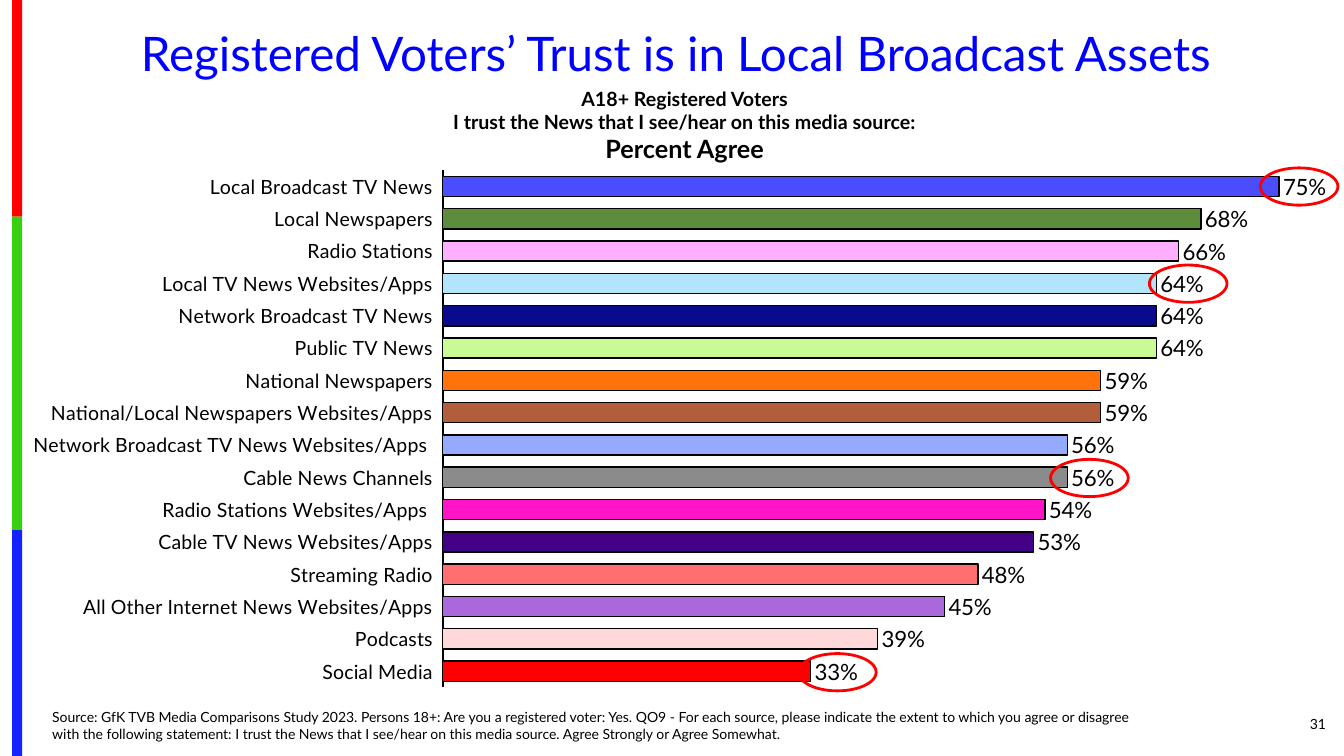
import pptx
import pptx.util
import pptx.oxml
import pptx.chart.data
from pptx.dml.color import RGBColor
from pptx.enum.chart import XL_CHART_TYPE, XL_LABEL_POSITION, XL_TICK_LABEL_POSITION, XL_TICK_MARK
from pptx.enum.shapes import MSO_SHAPE
from pptx.enum.text import MSO_ANCHOR, PP_ALIGN

# Content
TITLE = "Registered Voters’ Trust is in Local Broadcast Assets"
HEADS = [("A18+ Registered Voters", 14),
         ("I trust the News that I see/hear on this media source:", 14),
         ("Percent Agree", 18)]
SOURCE = ("Source: GfK TVB Media Comparisons Study 2023. Persons 18+: Are you a registered voter: Yes. "
          "QO9 - For each source, please indicate the extent to which you agree or disagree "
          "with the following statement: I trust the News that I see/hear on this media source. "
          "Agree Strongly or Agree Somewhat.")
PAGE = "31"
MEDIA = [
    ("Local Broadcast TV News", 0.75, "4C4CFF"),
    ("Local Newspapers", 0.68, "5C8C3C"),
    ("Radio Stations", 0.66, "FFAFFF"),
    ("Local TV News Websites/Apps", 0.64, "B2E5FC"),
    ("Network Broadcast TV News", 0.64, "0A0A8D"),
    ("Public TV News", 0.64, "CAFA96"),
    ("National Newspapers", 0.59, "FF730A"),
    ("National/Local Newspapers Websites/Apps", 0.59, "B25E3C"),
    ("Network Broadcast TV News Websites/Apps ", 0.56, "95A9FD"),
    ("Cable News Channels", 0.56, "8B8B8B"),
    ("Radio Stations Websites/Apps ", 0.54, "FF15C7"),
    ("Cable TV News Websites/Apps", 0.53, "430086"),
    ("Streaming Radio", 0.48, "FF6F6F"),
    ("All Other Internet News Websites/Apps", 0.45, "AA68DC"),
    ("Podcasts", 0.39, "FFD9D9"),
    ("Social Media", 0.33, "FF0000"),
]
RINGS = {0: 12.5, 3: 11.4, 9: 10.42, 15: 7.92}  # chart row: left edge
COLORS = {"black": "000000", "title": "0000FF", "ring": "FF0000"}
STRIPE = [("FE0000", 2.15), ("36CF12", 3.11), ("1322FE", 2.24)]
FONT = "Lato"
WIDE, HIGH = 13.33, 7.5
CHART = (0.33, 1.58, 12.91, 5.25)
PLOT = {"x": 0.311, "y": 0.021, "w": 0.689, "h": 0.979}

inch, pt = pptx.util.Inches, pptx.util.Pt
deck = pptx.Presentation()
deck.slide_width, deck.slide_height = inch(WIDE), inch(HIGH)
slide = deck.slides.add_slide(deck.slide_layouts[6])


def tint(name):
    return RGBColor.from_string(COLORS.get(name, name))


def style(font, size, color="black", bold=False):
    font.name, font.size, font.bold = FONT, pt(size), bold
    font.color.rgb = tint(color)


def text(lines, box, align=PP_ALIGN.LEFT, anchor=MSO_ANCHOR.TOP,
         color="black", bold=False, space=1.0):
    frame = slide.shapes.add_textbox(*map(inch, box)).text_frame
    frame.word_wrap, frame.vertical_anchor = True, anchor
    for i, (line, size) in enumerate(lines):
        para = frame.add_paragraph() if i else frame.paragraphs[0]
        para.alignment, para.line_spacing = align, space
        run = para.add_run()
        run.text = line
        style(run.font, size, color, bold)


def shape(kind, box, fill=None, line=None):
    part = slide.shapes.add_shape(kind, *map(inch, box))
    part.shadow.inherit = False
    if fill:
        part.fill.solid()
        part.fill.fore_color.rgb = tint(fill)
    else:
        part.fill.background()
    if line:
        part.line.color.rgb = tint(line)
        part.line.width = pt(2)
    else:
        part.line.fill.background()


# Side stripe
top = 0
for color, tall in STRIPE:
    shape(MSO_SHAPE.RECTANGLE, (0.12, top, 0.1, tall), fill=color)
    top += tall

# Bar chart
data = pptx.chart.data.CategoryChartData(number_format="0%")
data.categories = [name for name, _, _ in MEDIA]
data.add_series("Series 1", [value for _, value, _ in MEDIA])
chart = slide.shapes.add_chart(XL_CHART_TYPE.BAR_CLUSTERED, *map(inch, CHART), data).chart
chart.has_legend = chart.has_title = False
style(chart.font, 10)

axis = chart.category_axis
axis.reverse_order = True
axis.major_tick_mark = axis.minor_tick_mark = XL_TICK_MARK.NONE
axis.tick_label_position = XL_TICK_LABEL_POSITION.LOW
style(axis.tick_labels.font, 14)
axis.format.line.color.rgb = tint("black")
axis.format.line.width = pt(1.5)

scale = chart.value_axis
scale.minimum_scale, scale.maximum_scale = 0, 0.8
scale.has_major_gridlines = scale.visible = False

plot = chart.plots[0]
plot.gap_width, plot.vary_by_categories = 60, False
plot.has_data_labels = True
labels = plot.data_labels
labels.show_value = True
labels.number_format, labels.number_format_is_linked = "0%", False
labels.position = XL_LABEL_POSITION.OUTSIDE_END
style(labels.font, 16)
for i, (_, _, color) in enumerate(MEDIA):
    bar = plot.series[0].points[i].format
    bar.fill.solid()
    bar.fill.fore_color.rgb = tint(color)
    bar.line.color.rgb = tint("black")
    bar.line.width = pt(1)

# Fixed inner plot area
area = chart._chartSpace.chart.plotArea
for old in area.xpath("c:layout"):
    area.remove(old)
sizes = "".join(f'<c:{key} val="{share}"/>' for key, share in PLOT.items())
area.insert(0, pptx.oxml.parse_xml(
    '<c:layout xmlns:c="http://schemas.openxmlformats.org/drawingml/2006/chart">'
    '<c:manualLayout><c:layoutTarget val="inner"/><c:xMode val="edge"/><c:yMode val="edge"/>'
    f'{sizes}</c:manualLayout></c:layout>'))

# Title, headings, source and page number
text([(TITLE, 34)], (0.25, 0.25, 12.91, 0.61), align=PP_ALIGN.CENTER, color="title", space=0.9)
text([(PAGE, 10)], (10.25, 6.98, 3, 0.4), align=PP_ALIGN.RIGHT, anchor=MSO_ANCHOR.MIDDLE)
text([(SOURCE, 10)], (0.42, 6.98, 10.9, 0.44))
text(HEADS, (2, 0.81, 9.58, 0.88), align=PP_ALIGN.CENTER, bold=True)

# Rings centred on their chart rows
ring_w, ring_h = 0.77, 0.37
first = CHART[1] + PLOT["y"] * CHART[3]
pitch = PLOT["h"] * CHART[3] / len(MEDIA)
for row, left in RINGS.items():
    mid = first + (row + 0.5) * pitch
    shape(MSO_SHAPE.OVAL, (left, mid - ring_h / 2, ring_w, ring_h), line="ring")

deck.save("out.pptx")
